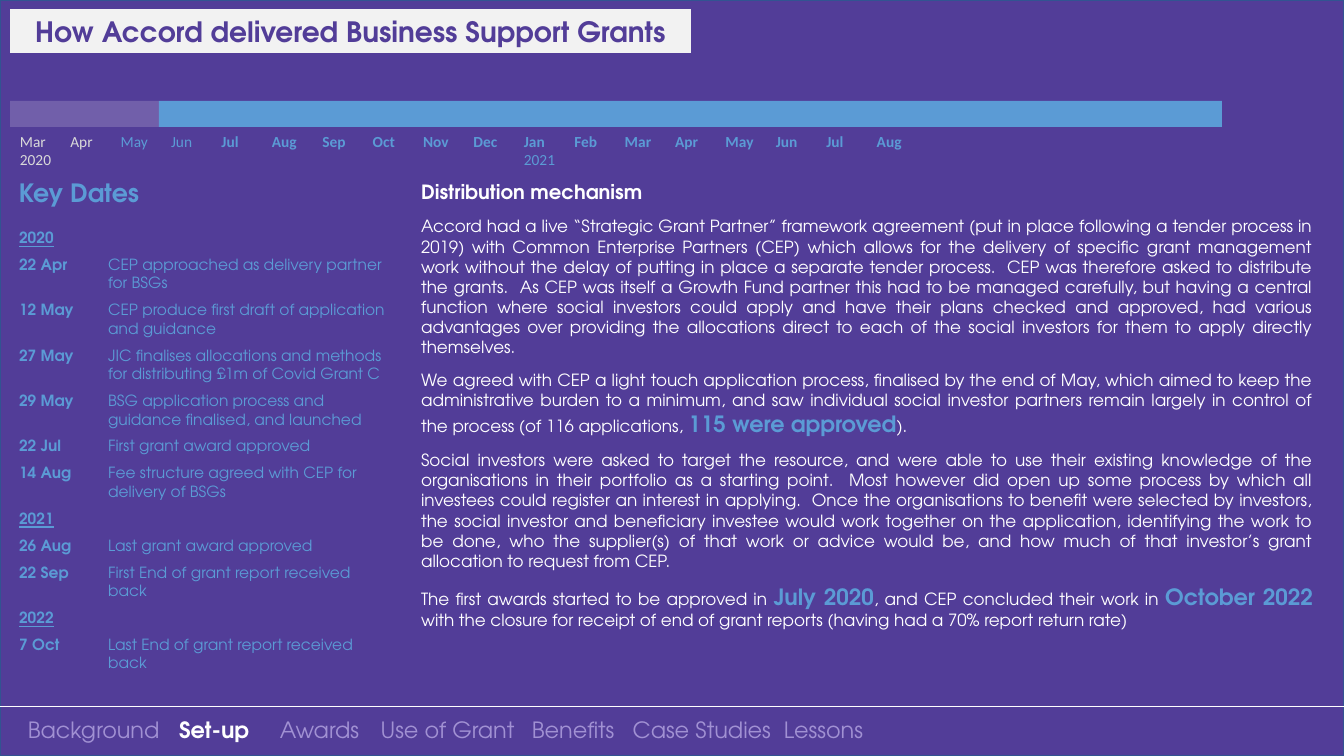
"""Build the slide on how the support grants were set up and delivered."""
from lxml.etree import SubElement as Sub
from pptx import Presentation
from pptx.dml.color import RGBColor as RGB
from pptx.enum.shapes import MSO_CONNECTOR as Link, MSO_SHAPE as Kind
from pptx.enum.text import MSO_ANCHOR as Anchor, MSO_AUTO_SIZE as Fit, PP_ALIGN as Align
from pptx.oxml.ns import qn
from pptx.util import Pt

HUES = {"purple": "523D98", "edge": "325491", "white": "FFFFFF", "pale": "F2F2F2",
        "blue": "5B9BD5", "lilac": "A191D3", "grey": "D9D9D9"}
SANS, PLAIN = "TeX Gyre Adventor", "Calibri"

STYLES = {
    "title": (20, "purple", True, SANS),
    "key": (18, "blue", True, SANS),
    "head": (14, "white", True, SANS),
    "text": (12, "white", False, SANS),
    "big": (16, "blue", True, SANS),
    "date": (11, "blue", True, SANS),
    "year": (11, "blue", True, SANS),
    "event": (11, "blue", False, SANS),
    "nav": (16, "lilac", False, SANS),
    "here": (16, "white", True, SANS),
    "past": (11, "grey", False, PLAIN),
    "start": (11, "blue", False, PLAIN),
    "month": (11, "blue", True, PLAIN),
}

TITLE = "How Accord delivered Business Support Grants"

MONTHS = [
    [("Mar\tApr\t", "past"), ("May\tJun\t", "start"),
     ("Jul\tAug\tSep\tOct\tNov\tDec\tJan\tFeb\tMar\tApr\tMay\tJun\tJul\tAug", "month")],
    [("2020" + "\t" * 10, "past"), ("2021", "start")],
]

DATES = {
    "2020": [
        ("22 Apr", "CEP approached as delivery partner for BSGs"),
        ("12 May", "CEP produce first draft of application and guidance"),
        ("27 May", "JIC finalises allocations and methods for distributing £1m of Covid Grant C"),
        ("29 May", "BSG application process and guidance finalised, and launched"),
        ("22 Jul", "First grant award approved"),
        ("14 Aug", "Fee structure agreed with CEP for delivery of BSGs"),
    ],
    "2021": [
        ("26 Aug", "Last grant award approved"),
        ("22 Sep", "First End of grant report received back"),
    ],
    "2022": [("7 Oct", "Last End of grant report received back")],
}

STORY = [
    [("Distribution mechanism", "head")],
    [("Accord had a live “Strategic Grant Partner” framework agreement (put in place "
      "following a tender process in 2019) with Common Enterprise Partners (CEP) which "
      "allows for the delivery of specific grant management work without the delay of "
      "putting in place a separate tender process.  CEP was therefore asked to distribute "
      "the grants.  As CEP was itself a Growth Fund partner this had to be managed "
      "carefully, but having a central function where social investors could apply and "
      "have their plans checked and approved, had various advantages over providing the "
      "allocations direct to each of the social investors for them to apply directly "
      "themselves.", "text")],
    [("We agreed with CEP a light touch application process, finalised by the end of May, "
      "which aimed to keep the administrative burden to a minimum, and saw individual "
      "social investor partners remain largely in control of the process (of 116 "
      "applications, ", "text"), ("115 were approved", "big"), (").", "text")],
    [("Social investors were asked to target the resource, and were able to use their "
      "existing knowledge of the organisations in their portfolio as a starting point.  "
      "Most however did open up some process by which all investees could register an "
      "interest in applying.  Once the organisations to benefit were selected by "
      "investors, the social investor and beneficiary investee would work together on the "
      "application, identifying the work to be done, who the supplier(s) of that work or "
      "advice would be, and how much of that investor’s grant allocation to request from "
      "CEP.", "text")],
    [("The first awards started to be approved in ", "text"), ("July 2020", "big"),
     (", and CEP concluded their work in ", "text"), ("October 2022 ", "big"),
     ("with the closure for receipt of end of grant reports (having had a 70% report "
      "return rate)", "text")],
]

NAV = [("Background", 0), ("Set-up", 212), ("Awards", 363), ("Use of Grant", 516),
       ("Benefits", 736), ("Case Studies", 899), ("Lessons", 1123)]
HERE = "Set-up"

WIDE, HIGH = 1344, 756
INCH = 914400
STEP = 69.2


def px(num):
    return round(num * INCH / 100.8)


def tint(hue):
    return RGB.from_string(HUES[hue])


def place(shape, left, top, wide, high):
    shape.left, shape.top, shape.width, shape.height = map(px, (left, top, wide, high))


def paint(shape, hue):
    shape.fill.solid()
    shape.fill.fore_color.rgb = tint(hue)


def block(slide, box, hue):
    shape = slide.shapes.add_shape(Kind.RECTANGLE, *map(px, box))
    shape.shadow.inherit = False
    paint(shape, hue)
    shape.line.fill.background()
    return shape


def write(shape, paras, align=Align.LEFT, gap=0, tabs=(), hang=0):
    frame = shape.text_frame
    frame.word_wrap = True
    frame.auto_size = Fit.NONE
    for num, runs in enumerate(paras):
        para = frame.add_paragraph() if num else frame.paragraphs[0]
        para.alignment = align
        para.space_before = Pt(0)
        para.space_after = Pt(gap)
        props = para._p.get_or_add_pPr()
        props.set("marL", str(px(hang)))
        props.set("indent", str(-px(hang)))
        Sub(props, qn("a:buNone"))
        if tabs:
            stops = Sub(props, qn("a:tabLst"))
            for stop in tabs:
                Sub(stops, qn("a:tab"), pos=str(px(stop)), algn="l")
        for text, style in runs:
            run = para.add_run()
            run.text = text
            size, hue, bold, face = STYLES[style]
            run.font.size, run.font.bold, run.font.name = Pt(size), bold, face
            run.font.color.rgb = tint(hue)
            run.font.underline = style == "year"


def label(slide, box, paras, **look):
    write(slide.shapes.add_textbox(*map(px, box)), paras, **look)


def main():
    deck = Presentation()
    deck.slide_width, deck.slide_height = px(WIDE), px(HIGH)
    slide = deck.slides.add_slide(deck.slide_layouts[3])
    title, dates, story = slide.placeholders

    back = block(slide, (0, 0, WIDE, HIGH), "purple")
    back.line.color.rgb = tint("edge")
    back.line.width = Pt(1)
    title._element.addprevious(back._element)

    place(title, 10, 9, 681, 44)
    paint(title, "pale")
    title.text_frame.vertical_anchor = Anchor.MIDDLE
    write(title, [[(TITLE, "title")]], align=Align.CENTER, gap=6)

    rows = []
    for year, events in DATES.items():
        rows.append([(year, "year")])
        rows += [[(day + "\t", "date"), (event, "event")] for day, event in events]
    place(dates, 9, 223, 393, 458)
    write(dates, rows, gap=6, hang=89)

    place(story, 411, 175, 912, 465)
    write(story, STORY, align=Align.JUSTIFY, gap=9)

    label(slide, (9, 172, 393, 45), [[("Key Dates", "key")]], gap=6)
    label(slide, (10, 127, 1313, 47), MONTHS, align=Align.JUSTIFY,
          tabs=[STEP * num for num in range(1, 18)])

    early = block(slide, (10, 101, 149, 26), "white")
    shade = early.fill._xPr.find(qn("a:solidFill"))[0]
    Sub(shade, qn("a:alpha"), val="18000")
    block(slide, (159, 101, 1063, 26), "blue")

    rule = slide.shapes.add_connector(Link.STRAIGHT, 0, px(706), px(WIDE), px(706))
    rule.line.color.rgb = tint("white")
    rule.line.width = Pt(0.5)
    Sub(rule._element.spPr, qn("a:effectLst"))

    menu = [(("\t" if stop else "") + name, "here" if name == HERE else "nav")
            for name, stop in NAV]
    label(slide, (18, 711, 1315, 37), [menu], tabs=[stop for _, stop in NAV if stop])

    deck.save("out.pptx")


if __name__ == "__main__":
    main()
